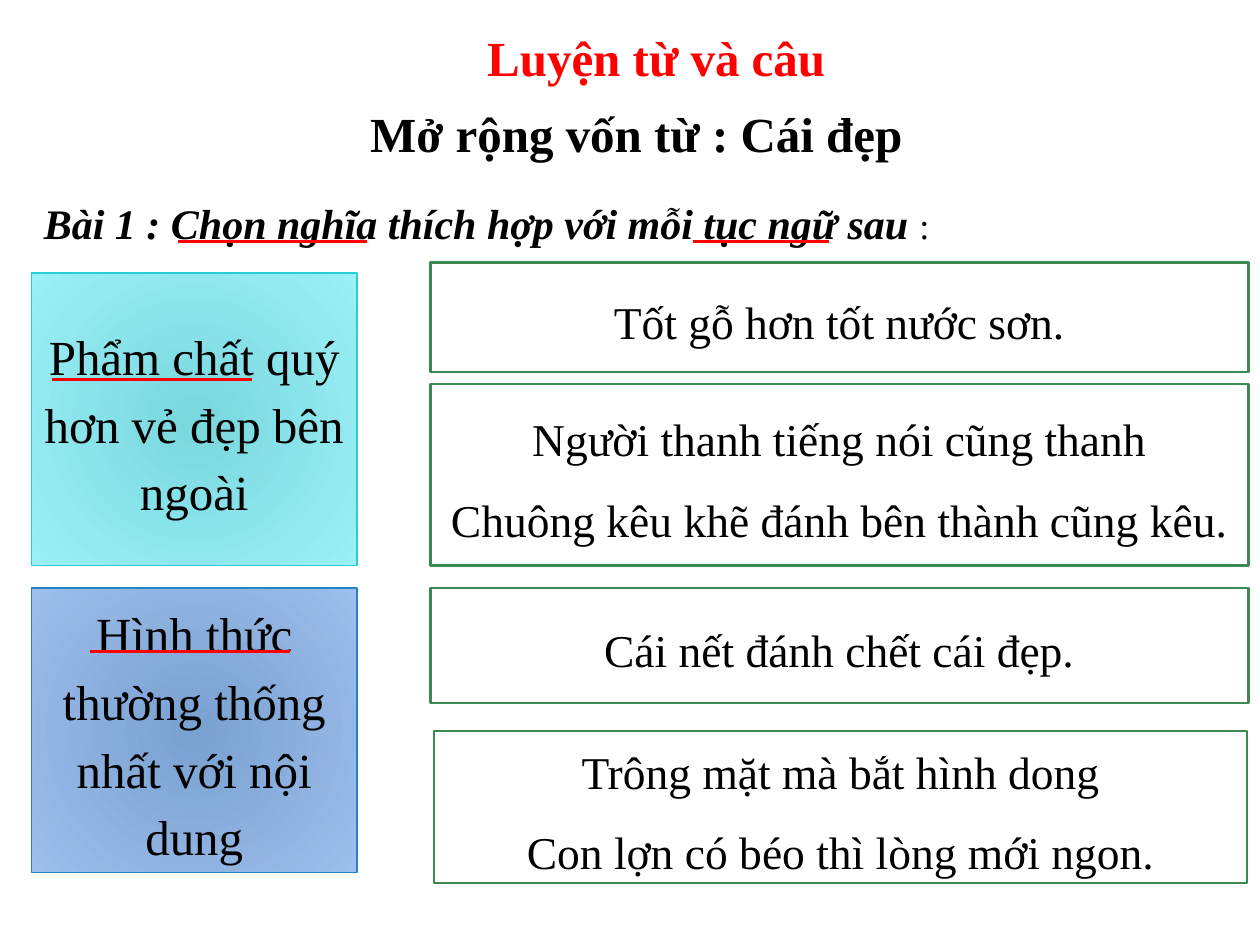
import pptx
import pptx.util
import pptx.dml.color
import pptx.enum.shapes
import pptx.enum.text
import pptx.oxml
import pptx.oxml.ns

Pt = pptx.util.Pt
ALIGN = pptx.enum.text.PP_ALIGN
RED, BLACK, GREEN = "FF0000", "000000", "3E8853"


def tint(color, code):
    color.rgb = pptx.dml.color.RGBColor.from_string(code)


def write(frame, lines, size, code=BLACK, bold=False, align=ALIGN.CENTER):
    frame.word_wrap = True
    frame.text = "\n".join(lines)
    for par in frame.paragraphs:
        par.alignment = align
        for run in par.runs:
            run.font.name = "Times New Roman"
            run.font.size = Pt(size)
            run.font.bold = bold
            tint(run.font.color, code)


deck = pptx.Presentation()
deck.slide_width, deck.slide_height = Pt(720), Pt(540)
slide = deck.slides.add_slide(deck.slide_layouts[6])
shapes = slide.shapes

heads = [
    (192, 12, 366, "Luyện từ và câu", RED),
    (165.6, 55.5, 396, "Mở rộng vốn từ : Cái đẹp", BLACK),
]
for left, top, width, line, code in heads:
    box = shapes.add_textbox(Pt(left), Pt(top), Pt(width), Pt(41))
    write(box.text_frame, [line], 28, code, True)

task = shapes.add_textbox(Pt(18), Pt(109.5), Pt(684), Pt(36)).text_frame
write(task, ["Bài 1 : Chọn nghĩa thích hợp với mỗi tục ngữ sau "], 24, BLACK, True, ALIGN.LEFT)
task.paragraphs[0].runs[0].font.italic = True
colon = task.paragraphs[0].add_run()
colon.text = ":"
colon.font.name = "Times New Roman"
colon.font.size = Pt(21)
tint(colon.font.color, BLACK)

cards = [
    (18, 156, 186, 167.2, ["Phẩm chất quý hơn vẻ đẹp bên ngoài"], 28, "27CED7", 0.75, ["79D7DE", "9CF0F7"]),
    (18, 336, 186, 162.7, ["Hình thức thường thống nhất với nội dung"], 28, "2683C6", 0.75, ["79A1D1", "9EBEEB"]),
    (246, 150, 467.5, 62.7, ["Tốt gỗ hơn tốt nước sơn."], 26, GREEN, 1.25, []),
    (246, 219.5, 467.5, 103.7,
     ["Người thanh tiếng nói cũng thanh", "Chuông kêu khẽ đánh bên thành cũng kêu."], 26, GREEN, 1.25, []),
    (246, 336, 467.5, 66, ["Cái nết đánh chết cái đẹp."], 26, GREEN, 1.25, []),
    (248.2, 417.6, 464.5, 87,
     ["Trông mặt mà bắt hình dong", "Con lợn có béo thì lòng mới ngon."], 26, GREEN, 1.25, []),
]
for left, top, width, height, lines, size, edge, weight, shades in cards:
    card = shapes.add_shape(
        pptx.enum.shapes.MSO_SHAPE.RECTANGLE, Pt(left), Pt(top), Pt(width), Pt(height))
    card.shadow.inherit = False
    tint(card.line.color, edge) if card.line.fill.solid() else tint(card.line.color, edge)
    card.line.width = Pt(weight)
    if shades:
        card.fill.gradient()
        for stop, place, shade in zip(card.fill.gradient_stops, (0, 1), shades):
            stop.position = place
            tint(stop.color, shade)
        grad = card.element.spPr.find(pptx.oxml.ns.qn("a:gradFill"))
        grad.replace(grad.find(pptx.oxml.ns.qn("a:lin")), pptx.oxml.parse_xml(
            f'<a:path {pptx.oxml.ns.nsdecls("a")} path="circle">'
            '<a:fillToRect l="50000" t="50000" r="50000" b="50000"/></a:path>'))
    else:
        card.fill.solid()
        tint(card.fill.fore_color, "FFFFFF")
    frame = card.text_frame
    write(frame, lines, size)
    frame.vertical_anchor = pptx.enum.text.MSO_ANCHOR.MIDDLE
    for par in frame.paragraphs:
        par.line_spacing = 1.15
        par.space_after = Pt(10)

marks = [
    (102, 210, 138, 2.25),
    (396, 474, 138, 2.25),
    (30, 144, 216.7, 1.75),
    (51.4, 165.6, 372.2, 1.75),
]
for start, end, y, weight in marks:
    mark = shapes.add_connector(
        pptx.enum.shapes.MSO_CONNECTOR.STRAIGHT, Pt(start), Pt(y), Pt(end), Pt(y))
    tint(mark.line.color, RED)
    mark.line.width = Pt(weight)
    mark.element.spPr.append(
        pptx.oxml.parse_xml(f'<a:effectLst {pptx.oxml.ns.nsdecls("a")}/>'))

deck.save("out.pptx")
